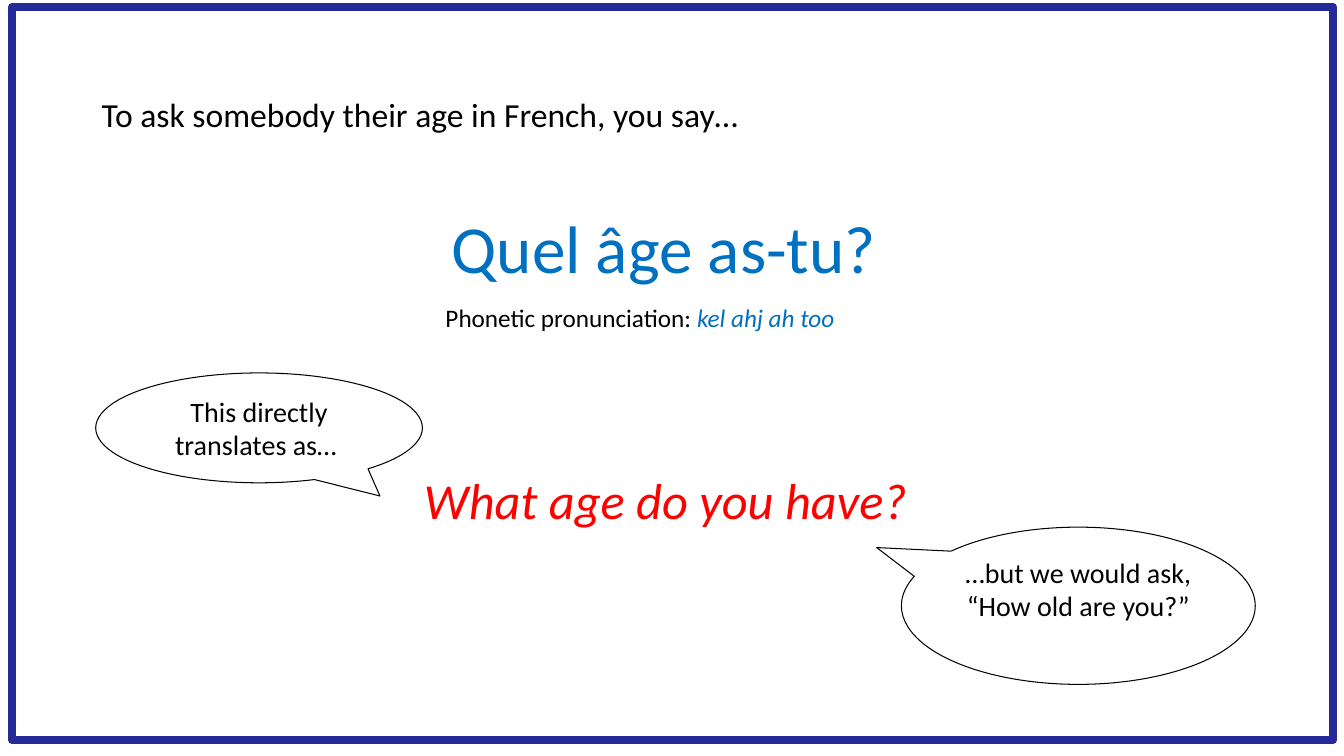
from pptx import Presentation
from pptx.dml.color import RGBColor
from pptx.enum.shapes import MSO_SHAPE
from pptx.enum.text import MSO_ANCHOR, MSO_AUTO_SIZE, PP_ALIGN
from pptx.util import Inches, Pt

BLACK = RGBColor(0x00, 0x00, 0x00)
BLUE = RGBColor(0x00, 0x70, 0xC0)
RED = RGBColor(0xFF, 0x00, 0x00)
NAVY = RGBColor(0x25, 0x2A, 0x98)

QUESTION = ("Quel âge as-tu? ", (0.91, 1.86, 11.5, 1.27))
TRANSLATION = ("What age do you have?", (0.85, 4.36, 11.5, 1.27))
INTRO = ("To ask somebody their age in French, you say…", (0.91, 0.88, 10.98, 0.5))
PHONETIC = ("Phonetic pronunciation: ", "kel ahj ah too", (4.32, 2.95, 4.55, 0.4))
FRAME = (0.12, 0.07, 13.1, 7.27)
CALLOUTS = [
    ("This directly translates as… ", (0.95, 3.7, 3.24, 1.09), (0.37, 0.62)),
    ("…but we would ask, “How old are you?”", (8.94, 5.23, 3.51, 1.56), (-0.57, -0.37)),
]


def box(place):
    return [Inches(v) for v in place]


def style(font, size, color, italic=False):
    font.name = "Calibri"
    font.size = Pt(size)
    font.color.rgb = color
    font.italic = italic


def write(sp, text, size, color, italic=False, align=PP_ALIGN.LEFT, anchor=MSO_ANCHOR.TOP):
    tf = sp.text_frame
    tf.word_wrap = True
    tf.vertical_anchor = anchor
    p = tf.paragraphs[0]
    p.text = text
    p.alignment = align
    style(p.font, size, color, italic)
    return p


def outline(s, kind, place, color, width):
    sp = s.shapes.add_shape(kind, *box(place))
    sp.shadow.inherit = False
    sp.fill.background()
    sp.line.color.rgb = color
    sp.line.width = Pt(width)
    return sp


prs = Presentation()
prs.slide_width, prs.slide_height = Inches(13.33), Inches(7.5)
s = prs.slides.add_slide(prs.slide_layouts[5])

text, place = QUESTION
title = s.shapes.title
title.left, title.top, title.width, title.height = box(place)
p = write(title, text, 48, BLUE, align=PP_ALIGN.CENTER, anchor=MSO_ANCHOR.MIDDLE)
p.line_spacing = 0.9

text, place = TRANSLATION
p = write(s.shapes.add_textbox(*box(place)), text, 36, RED, True,
          PP_ALIGN.CENTER, MSO_ANCHOR.MIDDLE)
p.line_spacing = 0.9

text, place = INTRO
write(s.shapes.add_textbox(*box(place)), text, 24, BLACK)

outline(s, MSO_SHAPE.RECTANGLE, FRAME, NAVY, 6)

for text, place, tail in CALLOUTS:
    sp = outline(s, MSO_SHAPE.OVAL_CALLOUT, place, BLACK, 0.75)
    sp.adjustments[0], sp.adjustments[1] = tail
    write(sp, text, 20, BLACK, align=PP_ALIGN.CENTER)

label, sound, place = PHONETIC
sp = s.shapes.add_textbox(*box(place))
p = write(sp, label, 18, BLACK)
r = p.add_run()
r.text = sound
style(r.font, 18, BLUE, True)
sp.text_frame.word_wrap = False
sp.text_frame.auto_size = MSO_AUTO_SIZE.SHAPE_TO_FIT_TEXT

prs.save("out.pptx")
